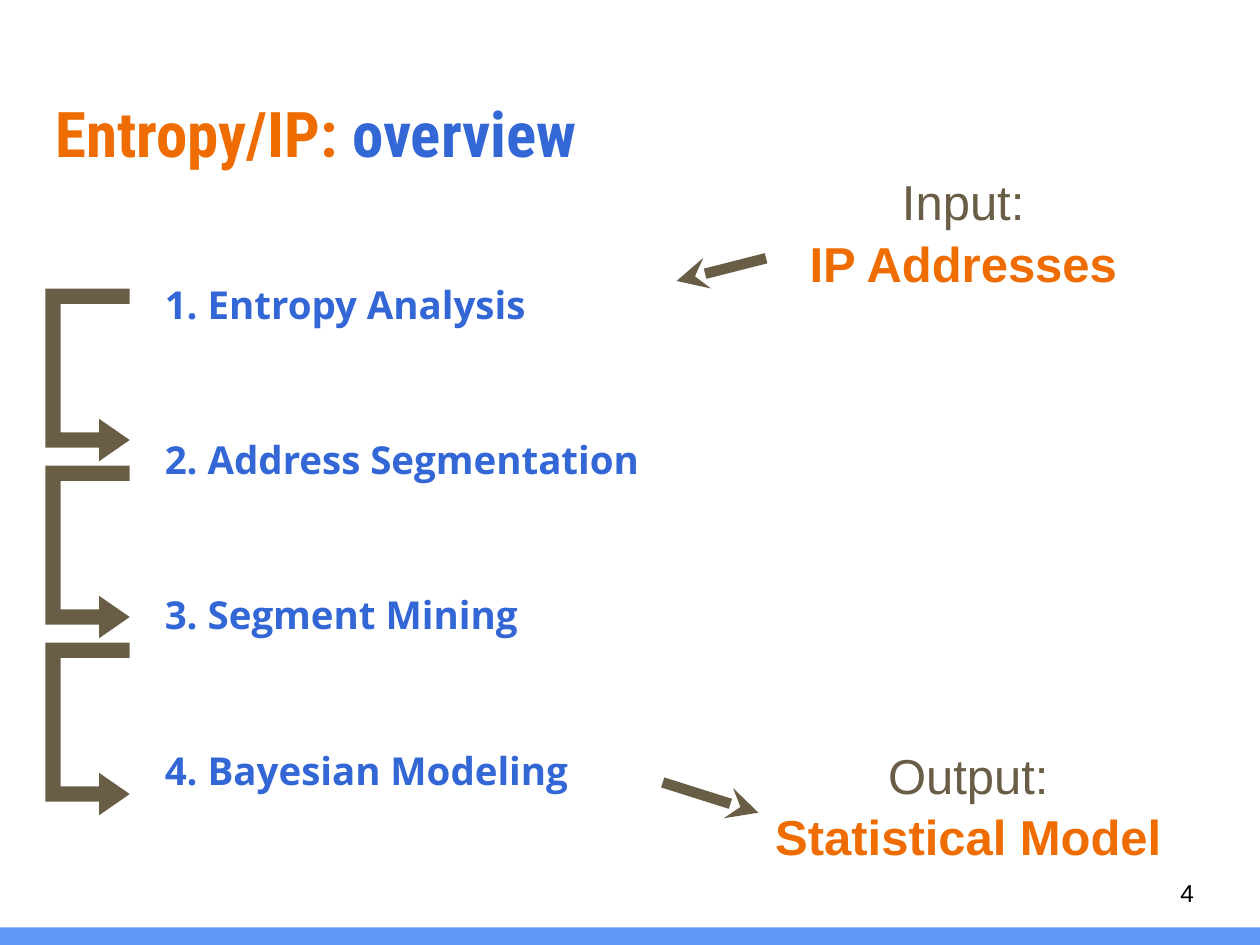
from lxml.etree import SubElement
from pptx import Presentation
from pptx.dml.color import RGBColor
from pptx.enum.shapes import MSO_CONNECTOR, MSO_SHAPE
from pptx.enum.text import MSO_ANCHOR, PP_ALIGN
from pptx.oxml.ns import qn
from pptx.util import Inches, Pt

BLUE, ORANGE, BROWN = "3367D6", "EF6C00", "695D46"


def tint(color, code):
    color.rgb = RGBColor.from_string(code)


class Deck:
    """Holds the style and the current slide, and draws each kind of element."""

    def __init__(self, wide, high):
        self.pres = Presentation()
        self.pres.slide_width = Inches(wide)
        self.pres.slide_height = Inches(high)
        self.slide = self.pres.slides.add_slide(self.pres.slide_layouts[6])
        self.pad = Inches(0.1)

    def shape(self, kind, at, code):
        item = self.slide.shapes.add_shape(kind, *map(Inches, at))
        item.shadow.inherit = False
        item.fill.solid()
        tint(item.fill.fore_color, code)
        item.line.fill.background()
        return item

    def text(self, at, rows, face, size, bold=False, anchor=MSO_ANCHOR.TOP, **form):
        frame = self.slide.shapes.add_textbox(*map(Inches, at)).text_frame
        frame.word_wrap = True
        frame.vertical_anchor = anchor
        for side in ("left", "top", "right", "bottom"):
            setattr(frame, f"margin_{side}", self.pad)
        for spot, row in enumerate(rows):
            para = frame.add_paragraph() if spot else frame.paragraphs[0]
            for name, value in form.items():
                setattr(para, name, value)
            for words, code, *heavy in row:
                run = para.add_run()
                run.text = words
                style = {"name": face, "size": Pt(size), "bold": bold or bool(heavy)}
                for name, value in style.items():
                    setattr(run.font, name, value)
                tint(run.font.color, code)
        return frame

    def label(self, at, head, name):
        rows = [[(head, BROWN)], [(name, ORANGE, True)]]
        self.text(at, rows, "Arial", 28, alignment=PP_ALIGN.CENTER, line_spacing=1.05)

    def turn(self, left, top):
        item = self.shape(MSO_SHAPE.U_TURN_ARROW, (left, top, 1.37, 0.67), BROWN)
        for spot, value in enumerate((0.181, 0.25, 0.361, 0, 1)):
            item.adjustments[spot] = value
        item.rotation = 270
        item.element.spPr.get_or_add_xfrm().set("flipH", "1")

    def arrow(self, start, end):
        item = self.slide.shapes.add_connector(
            MSO_CONNECTOR.STRAIGHT, *map(Inches, start + end))
        item.line.width = Pt(6)
        tint(item.line.color, BROWN)
        SubElement(item.line._get_or_add_ln(), qn("a:tailEnd"), type="stealth")
        SubElement(item.element.spPr, qn("a:effectLst"))


def main():
    deck = Deck(10, 7.5)
    deck.shape(MSO_SHAPE.RECTANGLE, (0, 7.36, 10, 0.14), "5E97F6")
    deck.text((0.34, 0.65, 9.32, 1.03), [[("Entropy/IP: ", ORANGE), ("overview", BLUE)]],
              "Roboto Condensed", 36, bold=True)

    steps = ("Entropy Analysis", "Address Segmentation", "Segment Mining",
             "Bayesian Modeling")
    rows = [[(f"{num}. {step}", BLUE)] for num, step in enumerate(steps, 1)]
    body = deck.text((1.11, 2.1, 5.56, 4.82), rows, "Open Sans", 22, bold=True,
                     line_spacing=1.08, space_after=Pt(60.2))
    for para in body.paragraphs:
        para._p.get_or_add_pPr().set("marL", str(Inches(0.1)))

    deck.text((9.27, 6.8, 0.6, 0.57), [[("4", "000000")]], "Arial", 14,
              anchor=MSO_ANCHOR.MIDDLE)
    for spot in range(len(steps) - 1):
        deck.turn(0.01, 2.64 + 1.405 * spot)
    deck.label((6.16, 1.24, 2.97, 1.26), "Input:", "IP Addresses")
    deck.label((5.93, 5.79, 3.51, 1.19), "Output:", "Statistical Model")
    deck.arrow((6.08, 2.05), (5.37, 2.23))
    deck.arrow((5.26, 6.21), (6.02, 6.45))
    deck.pres.save("out.pptx")


if __name__ == "__main__":
    main()
